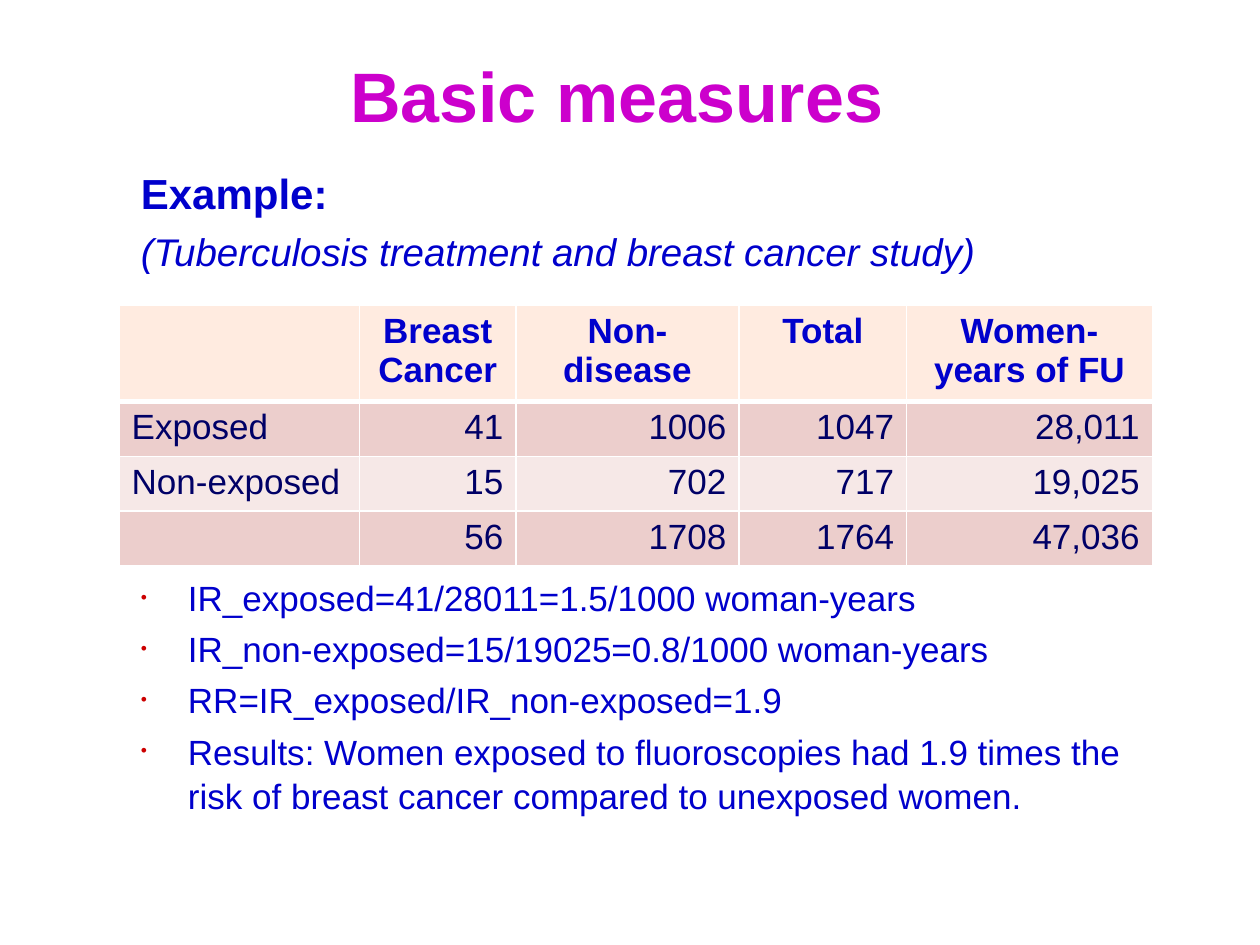
from pptx import Presentation
from pptx.dml.color import RGBColor
from pptx.enum.text import MSO_ANCHOR as Anchor, PP_ALIGN as Align
from pptx.oxml import parse_xml
from pptx.oxml.ns import nsdecls
from pptx.util import Cm, Pt

THEME = {
    "font": "Arial",
    "title": "CC00CC", "body": "0000CC", "cell": "000066", "bullet": "CC0000",
    "header_fill": "FFEBE0", "band_fills": ("ECCECC", "F6E8E7"), "border": "FFFFFF",
    "title_size": 40, "heading_size": 24, "subheading_size": 22, "text_size": 20,
}
TITLE = "Basic measures"
HEADING = "Example:"
SUBHEADING = "(Tuberculosis treatment and breast cancer study)"
TABLE_ROWS = [
    ("", "Breast Cancer", "Non-disease", "Total", "Women-years of FU"),
    ("Exposed", "41", "1006", "1047", "28,011"),
    ("Non-exposed", "15", "702", "717", "19,025"),
    ("", "56", "1708", "1764", "47,036"),
]
FINDINGS = [
    "IR_exposed=41/28011=1.5/1000 woman-years",
    "IR_non-exposed=15/19025=0.8/1000 woman-years",
    "RR=IR_exposed/IR_non-exposed=1.9",
    "Results: Women exposed to fluoroscopies had 1.9 times the risk of breast cancer "
    "compared to unexposed women.",
]
COLUMN_WIDTHS = (4.85, 3.15, 4.5, 3.38, 4.95)
ROW_HEIGHTS = (1.8, 1.04, 1.04, 1.04)
BODY_LEFT, BODY_WIDTH = 2.59, 21.51
BULLET_INDENT = Cm(0.95)


def add_run(paragraph, text, size, color, bold=False, italic=False):
    """Append one styled run to a paragraph."""
    run = paragraph.add_run()
    run.text = text
    font = run.font
    font.name, font.size, font.bold, font.italic = THEME["font"], Pt(size), bold, italic
    font.color.rgb = RGBColor.from_string(THEME[color])


def add_text_frame(slide, left, top, width, height, anchor=Anchor.TOP):
    """Add a wrapping text box and return its text frame."""
    frame = slide.shapes.add_textbox(Cm(left), Cm(top), Cm(width), Cm(height)).text_frame
    frame.word_wrap = True
    frame.vertical_anchor = anchor
    return frame


def add_body_paragraph(frame, index, size):
    """Return the paragraph at an index, spaced in proportion to its type size."""
    paragraph = frame.add_paragraph() if index else frame.paragraphs[0]
    paragraph.line_spacing = 1.05
    paragraph.space_before = Pt(0.2 * size if index else 0)
    return paragraph


def add_bullet(paragraph):
    """Give a paragraph a small coloured bullet and a hanging indent."""
    properties = paragraph._p.get_or_add_pPr()
    properties.set("marL", str(BULLET_INDENT))
    properties.set("indent", str(-BULLET_INDENT))
    for element in (
        f'<a:buClr {nsdecls("a")}><a:srgbClr val="{THEME["bullet"]}"/></a:buClr>',
        f'<a:buSzPct {nsdecls("a")} val="50000"/>',
        f'<a:buFont {nsdecls("a")} typeface="{THEME["font"]}"/>',
        f'<a:buChar {nsdecls("a")} char="•"/>',
    ):
        properties.append(parse_xml(element))


def set_borders(cell, row):
    """Draw cell borders, with a heavy rule under the header row."""
    widths = {"L": 1, "R": 1, "T": 3 if row == 1 else 1, "B": 3 if row == 0 else 1}
    for side, width in widths.items():
        cell._tc.get_or_add_tcPr().append(parse_xml(
            f'<a:ln{side} {nsdecls("a")} w="{Pt(width)}"><a:solidFill>'
            f'<a:srgbClr val="{THEME["border"]}"/></a:solidFill></a:ln{side}>'))


def add_measures_table(slide):
    """Add the table of cases and follow-up."""
    table = slide.shapes.add_table(
        len(TABLE_ROWS), len(COLUMN_WIDTHS), Cm(2.4), Cm(6.15),
        Cm(sum(COLUMN_WIDTHS)), Cm(sum(ROW_HEIGHTS))).table
    for column, width in zip(table.columns, COLUMN_WIDTHS):
        column.width = Cm(width)
    for table_row, height in zip(table.rows, ROW_HEIGHTS):
        table_row.height = Cm(height)
    for row, values in enumerate(TABLE_ROWS):
        header = row == 0
        fill = THEME["header_fill"] if header else THEME["band_fills"][(row - 1) % 2]
        for column, value in enumerate(values):
            cell = table.cell(row, column)
            set_borders(cell, row)
            cell.fill.solid()
            cell.fill.fore_color.rgb = RGBColor.from_string(fill)
            paragraph = cell.text_frame.paragraphs[0]
            paragraph.alignment = (
                Align.CENTER if header else Align.RIGHT if column else Align.LEFT)
            if value:
                add_run(paragraph, value, THEME["text_size"],
                        "body" if header else "cell", bold=header)


def main():
    """Build and save the slide."""
    presentation = Presentation()
    presentation.slide_width, presentation.slide_height = Cm(25.4), Cm(19.05)
    slide = presentation.slides.add_slide(presentation.slide_layouts[6])

    title = add_text_frame(slide, 1, 0.81, 22.86, 2.21, Anchor.MIDDLE).paragraphs[0]
    title.alignment = Align.CENTER
    add_run(title, TITLE, THEME["title_size"], "title", bold=True)

    intro = add_text_frame(slide, BODY_LEFT, 3.2, BODY_WIDTH, 2.6)
    size = THEME["heading_size"]
    add_run(add_body_paragraph(intro, 0, size), HEADING, size, "body", bold=True)
    size = THEME["subheading_size"]
    add_run(add_body_paragraph(intro, 1, size), SUBHEADING, size, "body", italic=True)

    add_measures_table(slide)

    findings = add_text_frame(slide, BODY_LEFT, 11.46, BODY_WIDTH, 4.9)
    size = THEME["text_size"]
    for index, finding in enumerate(FINDINGS):
        paragraph = add_body_paragraph(findings, index, size)
        add_bullet(paragraph)
        add_run(paragraph, finding, size, "body")

    presentation.save("out.pptx")


if __name__ == "__main__":
    main()
